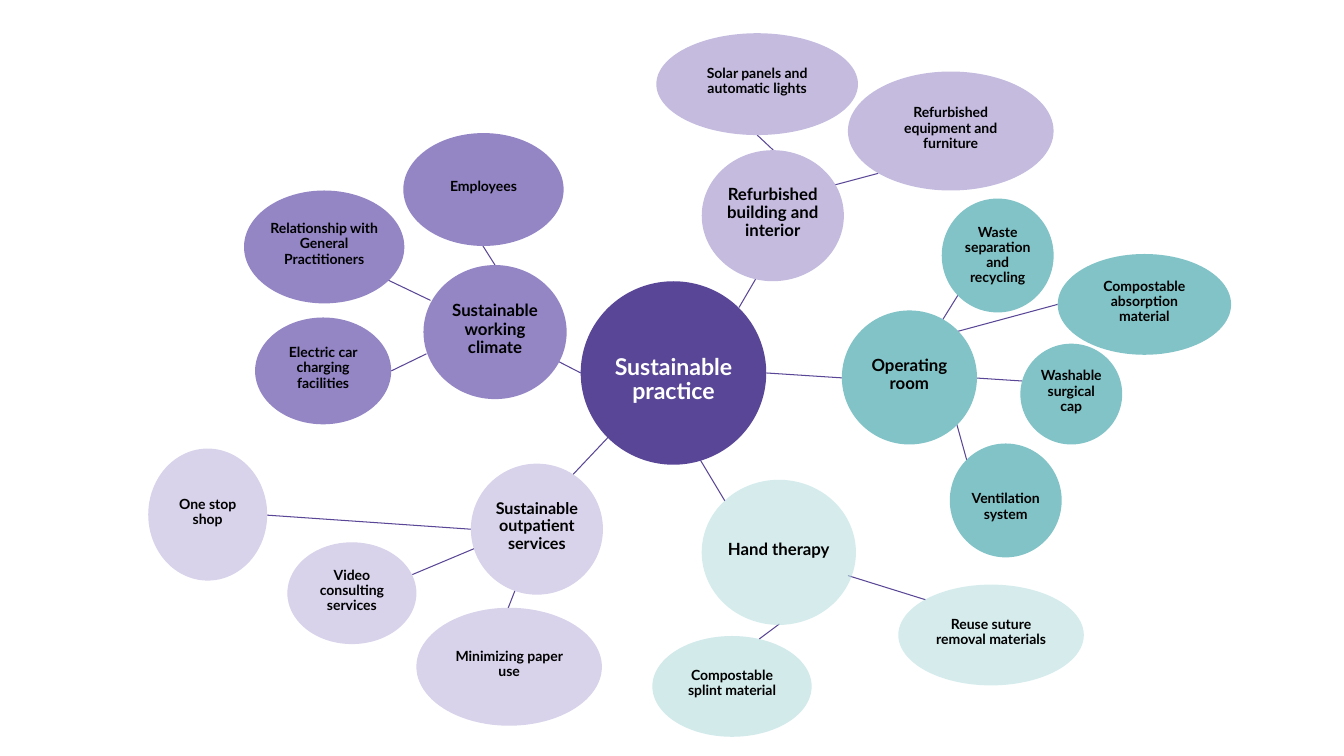
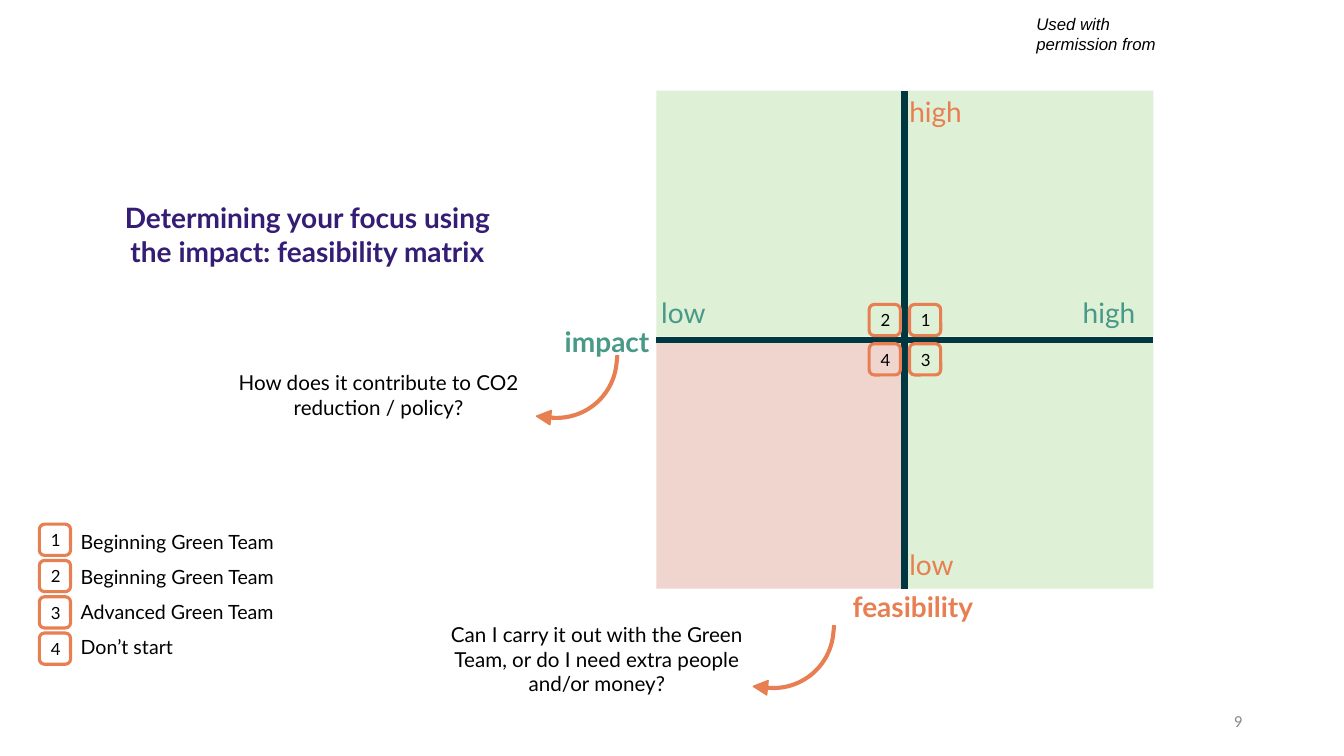
from pptx import Presentation
from pptx.dml.color import RGBColor
from pptx.enum.shapes import MSO_CONNECTOR, MSO_SHAPE
from pptx.enum.text import MSO_ANCHOR, MSO_AUTO_SIZE, PP_ALIGN
from pptx.oxml.ns import qn
from pptx.util import Inches, Pt
from lxml.etree import SubElement

BLACK = RGBColor(0x00, 0x00, 0x00)
WHITE = RGBColor(0xFF, 0xFF, 0xFF)
GREY = RGBColor(0x88, 0x88, 0x88)
INDIGO = RGBColor(0x59, 0x46, 0x96)
VIOLET = RGBColor(0x94, 0x85, 0xC5)
LILAC = RGBColor(0xC4, 0xBB, 0xDF)
MAUVE = RGBColor(0xD8, 0xD2, 0xEA)
TEAL = RGBColor(0x82, 0xC3, 0xC7)
MINT = RGBColor(0xBA, 0xDF, 0xE0)
GREEN = RGBColor(0xDE, 0xF0, 0xD5)
ROSE = RGBColor(0xF0, 0xD4, 0xCE)
PINE = RGBColor(0x00, 0x37, 0x41)
SEA = RGBColor(0x49, 0x99, 0x89)
ORANGE = RGBColor(0xE8, 0x7F, 0x52)
PURPLE = RGBColor(0x35, 0x1C, 0x75)

LEFT, CENTER, RIGHT = PP_ALIGN.LEFT, PP_ALIGN.CENTER, PP_ALIGN.RIGHT


class Deck:
    """Holds the shared style and the current slide."""

    font = "Lato"

    def __init__(self):
        self.prs = Presentation()
        self.prs.slide_width = Inches(13.33)
        self.prs.slide_height = Inches(7.5)
        self.slide = None

    def new(self, layout):
        self.slide = self.prs.slides.add_slide(self.prs.slide_layouts[layout])

    def place(self, shape, box):
        shape.left, shape.top, shape.width, shape.height = map(Inches, box)

    def inset(self, frame, left, top, right, bottom):
        frame.margin_left, frame.margin_top = Inches(left), Inches(top)
        frame.margin_right, frame.margin_bottom = Inches(right), Inches(bottom)

    def add_run(self, par, text, size, color=BLACK, align=LEFT, bold=False,
                italic=False, font=None):
        par.alignment = align
        run = par.add_run()
        run.text = text
        run.font.name = font or self.font
        run.font.size = Pt(size)
        run.font.bold, run.font.italic = bold, italic
        run.font.color.rgb = color

    def text(self, box, text, size, anchor=MSO_ANCHOR.TOP, **style):
        shape = self.slide.shapes.add_textbox(*map(Inches, box))
        frame = shape.text_frame
        frame.word_wrap = True
        frame.vertical_anchor = anchor
        self.add_run(frame.paragraphs[0], text, size, **style)

    def holder(self, index, box):
        shape = self.slide.placeholders[index]
        self.place(shape, box)
        frame = shape.text_frame
        frame.word_wrap = True
        frame.auto_size = MSO_AUTO_SIZE.NONE
        frame.vertical_anchor = MSO_ANCHOR.TOP
        return frame

    def title(self, box, text):
        par = self.holder(0, box).paragraphs[0]
        self.add_run(par, text, 20, PURPLE, CENTER, bold=True)

    def items(self, box, texts, size, gap):
        frame = self.holder(1, box)
        for i, text in enumerate(texts):
            par = frame.add_paragraph() if i else frame.paragraphs[0]
            props = par._p.get_or_add_pPr()
            props.set("marL", "0")
            props.set("indent", "0")
            par.space_before = Pt(gap if i else 0)
            SubElement(props, qn("a:buNone"))
            self.add_run(par, text, size)

    def shape(self, kind, box, fill=None, line=None, width=1):
        shape = self.slide.shapes.add_shape(kind, *map(Inches, box))
        shape.shadow.inherit = False
        if fill is None:
            shape.fill.background()
        else:
            shape.fill.solid()
            shape.fill.fore_color.rgb = fill
        if line is None:
            shape.line.fill.background()
        else:
            shape.line.color.rgb = line
            shape.line.width = Pt(width)
        return shape

    def bubble(self, box, text, fill, size=10, color=BLACK, top=0.01, alpha=None):
        shape = self.shape(MSO_SHAPE.OVAL, box, fill)
        if alpha:
            tint = shape._element.spPr.find(qn("a:solidFill")).find(qn("a:srgbClr"))
            SubElement(tint, qn("a:alpha"), val=str(alpha * 1000))
        frame = shape.text_frame
        frame.word_wrap = True
        frame.vertical_anchor = MSO_ANCHOR.MIDDLE
        self.inset(frame, 0.01, top, 0.01, 0.06)
        par = frame.paragraphs[0]
        par.line_spacing = 0.9
        self.add_run(par, text, size, color, CENTER, bold=True)

    def badge(self, x, y, text):
        shape = self.shape(MSO_SHAPE.ROUNDED_RECTANGLE, (x, y, 0.31, 0.31),
                           line=ORANGE, width=2.25)
        frame = shape.text_frame
        frame.vertical_anchor = MSO_ANCHOR.MIDDLE
        self.add_run(frame.paragraphs[0], text, 12, align=CENTER)

    def arrow(self, x, y):
        shape = self.shape(MSO_SHAPE.BENT_ARROW, (x, y, 0.75, 0.75), ORANGE, ORANGE)
        for i, value in enumerate((0.036, 0.096, 0.187, 0.813)):
            shape.adjustments[i] = value
        shape.rotation = 185.8

    def line(self, ends, color=INDIGO, width=0.75):
        line = self.slide.shapes.add_connector(MSO_CONNECTOR.STRAIGHT,
                                               *map(Inches, ends))
        line.line.color.rgb = color
        line.line.width = Pt(width)
        SubElement(line._element.spPr, qn("a:effectLst"))


def mind_map(deck):
    deck.new(6)
    # Links from hub to topics, and from topics to ideas
    links = [
        (7.33, 3.05, 7.57, 2.64), (7.6, 3.7, 8.37, 3.75), (6.03, 4.34, 5.53, 4.87),
        (6.89, 4.47, 7.19, 4.97), (5.76, 3.7, 5.41, 3.52),
        (7.67, 1.49, 7.51, 1.34), (8.26, 1.84, 8.71, 1.72),
        (9.5, 2.93, 9.27, 3.3), (9.49, 3.29, 10.49, 3.02),
        (10.14, 3.78, 9.68, 3.75), (9.49, 4.21, 9.59, 4.57),
        (9.18, 5.95, 8.41, 5.71), (7.53, 6.34, 7.73, 6.19),
        (4.71, 5.44, 4.09, 5.7), (5.17, 5.7, 4.92, 6.34), (4.67, 5.25, 2.64, 5.11),
        (4.23, 3.51, 3.88, 3.68), (4.27, 2.98, 3.81, 2.76), (4.91, 2.63, 4.79, 2.44),
    ]
    for ends in links:
        deck.line(ends)

    # Hub
    deck.bubble((5.76, 2.79, 1.84, 1.82), "Sustainable practice", INDIGO,
                16.5, WHITE, top=0.2)

    # Topics
    deck.bubble((4.2, 2.63, 1.42, 1.33), "Sustainable working climate", VIOLET, 12)
    deck.bubble((6.96, 1.49, 1.41, 1.3), "Refurbished building and interior", LILAC, 12)
    deck.bubble((8.35, 3.08, 1.34, 1.33), "Operating room", TEAL, 12)
    deck.bubble((6.96, 4.76, 1.53, 1.44), "Hand therapy", MINT, 12, alpha=60)
    deck.bubble((4.67, 4.6, 1.31, 1.3), "Sustainable outpatient services", MAUVE, 11.5)

    # Ideas
    ideas = [
        ((4, 1.32, 1.59, 1.12), "Employees", VIOLET),
        ((2.42, 1.89, 1.59, 1.12), "Relationship with General Practitioners", VIOLET),
        ((2.53, 3.15, 1.35, 1.06), "Electric car charging facilities", VIOLET),
        ((6.51, 0.33, 2, 1.01), "Solar panels and automatic lights", LILAC),
        ((8.41, 0.71, 2.04, 1.18), "Refurbished equipment and furniture", LILAC),
        ((10.49, 2.52, 1.72, 1), "Compostable absorption material", TEAL),
        ((10.12, 3.41, 1.01, 1), "Washable surgical cap", TEAL),
        ((1.47, 4.45, 1.18, 1.31), "One stop shop", MAUVE),
        ((2.85, 5.38, 1.28, 1.01), "Video consulting services", MAUVE),
        ((4.13, 6.03, 1.84, 1.17), "Minimizing paper use", MAUVE),
    ]
    for box, text, fill in ideas:
        deck.bubble(box, text, fill)
    deck.bubble((9.34, 1.97, 1.11, 1.13), "Waste separation and recycling", TEAL, top=0.06)
    deck.bubble((9.42, 4.4, 1.11, 1.13), "Ventilation system", TEAL, top=0.19)
    deck.bubble((8.91, 5.8, 1.84, 1), "Reuse suture removal materials", MINT, alpha=60)
    deck.bubble((6.47, 6.31, 1.58, 1), "Compostable splint material", MINT, alpha=65)


def matrix(deck):
    deck.new(1)
    deck.title((0.91, 1.94, 4.28, 0.77),
               "Determining your focus using the impact: feasibility matrix")

    # Quadrants with their numbers
    cells = [("2", 0, 0, GREEN), ("1", 1, 0, GREEN), ("4", 0, 1, ROSE), ("3", 1, 1, GREEN)]
    for _, col, row, fill in cells:
        deck.shape(MSO_SHAPE.RECTANGLE,
                   (6.51 + 2.49 * col, 0.9 + 2.5 * row, 2.44, 2.44), fill)
    deck.line((8.97, 0.9, 8.97, 5.84), PINE, 4.5)
    deck.line((6.51, 3.37, 11.44, 3.37), PINE, 4.5)
    for mark, col, row, _ in cells:
        deck.badge(8.62 + 0.4 * col, 3.02 + 0.39 * row, mark)

    # Axis names and ends
    deck.text((5.17, 3.17, 1.37, 0.44), "impact", 20, color=SEA, align=RIGHT, bold=True)
    deck.text((8.03, 5.8, 2.05, 0.44), "feasibility", 20, color=ORANGE,
              align=CENTER, bold=True)
    for x, y, text, color in [(6.46, 2.88, "low", SEA), (10.64, 2.88, "high", SEA),
                              (8.92, 5.38, "low", ORANGE), (8.92, 0.89, "high", ORANGE)]:
        deck.text((x, y, 0.85, 0.44), text, 20, color=color)

    # Questions behind each axis
    deck.text((1.95, 3.62, 3.61, 0.59),
              "How does it contribute to CO2 reduction / policy?", 14.7, align=CENTER)
    deck.text((4.27, 6.12, 3.3, 0.84),
              "Can I carry it out with the Green Team, or do I need extra people "
              "and/or money?", 14.7, align=CENTER)
    deck.arrow(5.35, 3.49)
    deck.arrow(7.5, 6.17)

    # Legend
    for i in range(4):
        deck.badge(0.39, 5.2 + 0.36 * i, str(i + 1))
    deck.items((0.7, 5.21, 2.35, 1.45),
               ["Beginning Green Team", "Beginning Green Team",
                "Advanced Green Team", "Don’t start"], 14, 8.2)

    # Credit and page number
    deck.text((10.18, 0.09, 1.48, 0.49), "Used with permission from", 12,
              italic=True, font="Arial")
    deck.text((9.42, 6.95, 3, 0.4), "9", 12, MSO_ANCHOR.MIDDLE, color=GREY,
              align=RIGHT, font="Calibri")


def main():
    deck = Deck()
    mind_map(deck)
    matrix(deck)
    deck.prs.save("out.pptx")


if __name__ == "__main__":
    main()
